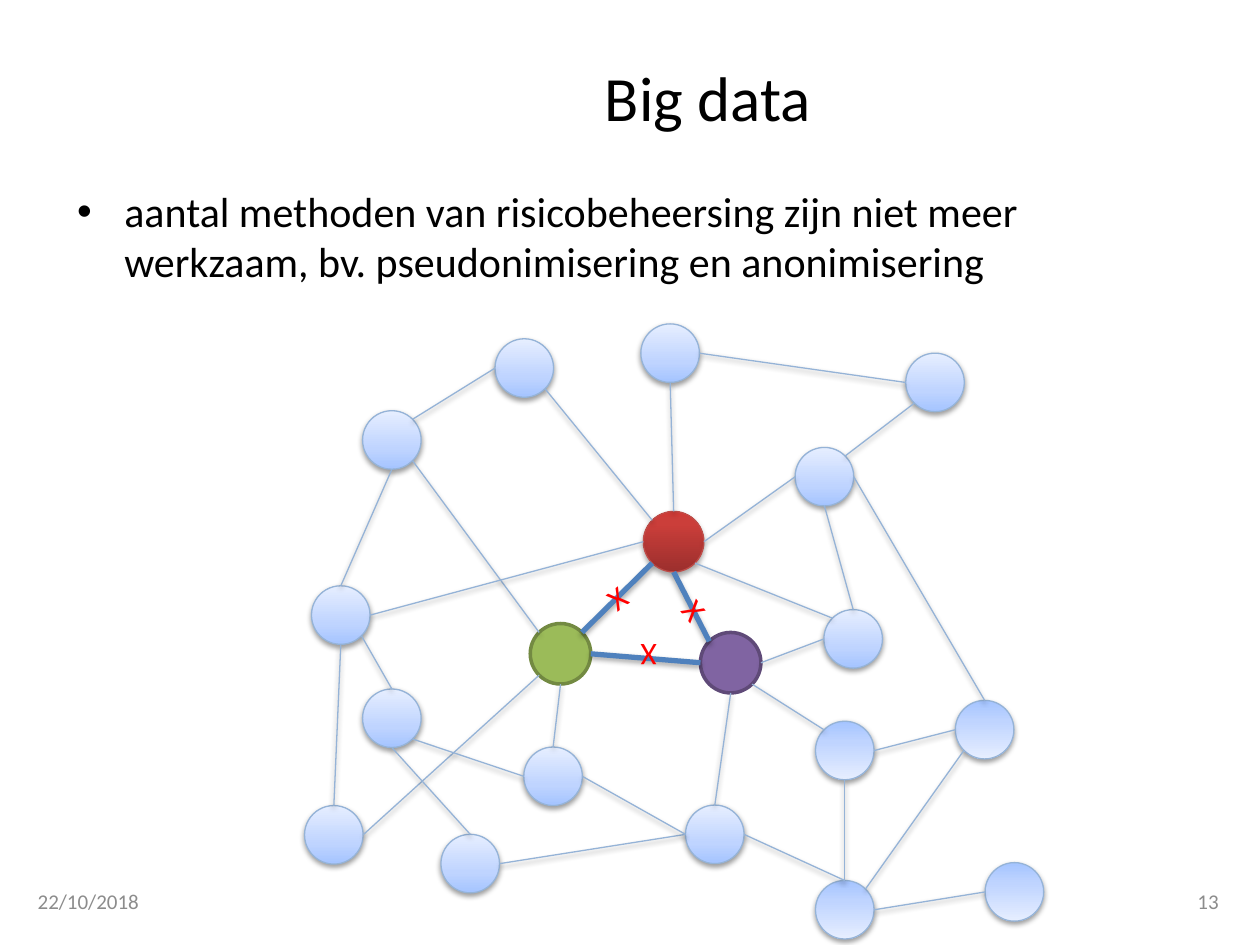
from dataclasses import dataclass
from math import cos, radians, sin

from lxml.etree import SubElement
from pptx import Presentation
from pptx.dml.color import RGBColor
from pptx.enum.shapes import MSO_CONNECTOR as Connector, MSO_SHAPE as Shape
from pptx.enum.text import MSO_ANCHOR as Anchor, MSO_AUTO_SIZE as AutoSize, PP_ALIGN as Align
from pptx.oxml.ns import qn
from pptx.util import Cm, Pt


@dataclass(frozen=True)
class Theme:
    font: str = "Calibri"
    title_size: float = 36
    body_size: float = 24
    mark_size: float = 18
    footer_size: float = 12
    text: str = "000000"
    footer: str = "8C8C8C"
    mark: str = "FF0000"
    node_line: str = "95B3D7"
    strong_line: str = "4F81BD"
    red_line: str = "BF4C48"
    green: str = "9BBB59"
    green_line: str = "738A42"
    purple: str = "8064A2"
    purple_line: str = "5F4A78"
    node_stops: tuple = ((0, "A4C4FF"), (35, "BFD4FF"), (100, "E6EEFF"))
    red_stops: tuple = ((0, "9C2F2D"), (80, "CB3E3A"), (100, "CE3B37"))


THEME = Theme()
NODE_SIZE, CORE_SIZE = 1.18, 1.22

# Centres in cm; the gradient of the lower-right nodes runs the other way
NODES = {
    "A": (7.9, 8.87), "B": (10.57, 7.42), "C": (6.87, 12.4), "D": (18.85, 7.71),
    "E": (16.62, 9.61), "F": (13.51, 7.12), "G": (6.73, 16.83), "H": (11.15, 15.65),
    "I": (7.9, 14.48), "J": (17.2, 12.88), "K": (14.41, 16.82), "L": (9.48, 17.41),
}
LOWER_RIGHT_NODES = {
    "M": (17.03, 15.13), "N": (19.85, 14.71), "O": (17.03, 18.34), "P": (20.45, 17.98),
}

# Connection points of a circle, counter-clockwise from the top in 45 degree steps
SITES = ("T", "TL", "L", "BL", "B", "BR", "R", "TR")

LINKS = (
    "A TR B L", "C BR I T", "G T C B", "G R green BL", "I BR H L", "L T I B",
    "K L L R", "K L H R", "K T purple B", "green B H T", "J L purple R",
    "J TL red BR", "J T E B", "D BL E TR", "D L F R", "E L red R", "red T F B",
    "red TL B BR", "green TL A BR", "A B C T", "red L C R", "P L O R", "M B O T",
    "N L M R", "M TL purple BR", "O T K R", "N T E R", "N BL O TR",
)
BROKEN_LINKS = ("red BL green TR", "green R purple L", "red B purple TL")

# Left, top and rotation of the crosses on the broken links
CROSSES = ((12.01, 11.53, 323.1), (13.59, 11.79, 50.8), (12.65, 12.73, 180))


def rgb(value):
    return RGBColor.from_string(value)


def add_shadow(effects, alpha, distance):
    shadow = SubElement(effects, qn("a:outerShdw"), blurRad=str(Pt(3.1)),
                        dist=str(Pt(distance)), dir="5400000", rotWithShape="0")
    black = SubElement(shadow, qn("a:srgbClr"), val="000000")
    SubElement(black, qn("a:alpha"), val=str(alpha * 1000))


def fill_gradient(circle, stops, angle):
    properties = circle._element.spPr
    gradient = SubElement(properties, qn("a:gradFill"), rotWithShape="1")
    stop_list = SubElement(gradient, qn("a:gsLst"))
    for position, color in stops:
        stop = SubElement(stop_list, qn("a:gs"), pos=str(position * 1000))
        SubElement(stop, qn("a:srgbClr"), val=color)
    SubElement(gradient, qn("a:lin"), ang=str(angle * 60000), scaled="0")
    properties.find(qn("a:prstGeom")).addnext(gradient)


def add_node(slide, center, size, line, width=0.75, fill=None, stops=None,
             angle=270, shadow=None):
    x, y = center
    node = slide.shapes.add_shape(Shape.OVAL, Cm(x - size / 2), Cm(y - size / 2),
                                  Cm(size), Cm(size))
    node.shadow.inherit = False
    node.line.color.rgb = rgb(line)
    node.line.width = Pt(width)
    if stops:
        fill_gradient(node, stops, angle)
    else:
        node.fill.solid()
        node.fill.fore_color.rgb = rgb(fill)
    if shadow:
        add_shadow(node._element.spPr.find(qn("a:effectLst")), *shadow)
    return node


def site_point(node, site):
    turn = radians(45 * SITES.index(site))
    radius = node.width / 2
    return (round(node.left + radius - radius * sin(turn)),
            round(node.top + radius - radius * cos(turn)))


def add_link(slide, nodes, link, color, width, shadow):
    start, start_site, end, end_site = link.split()
    ends = (("a:stCxn", nodes[start], start_site), ("a:endCxn", nodes[end], end_site))
    points = [site_point(node, site) for _, node, site in ends]
    line = slide.shapes.add_connector(Connector.STRAIGHT, *points[0], *points[1])
    line.line.color.rgb = rgb(color)
    line.line.width = Pt(width)
    # Glue both ends to the circles' own connection points
    joints = line._element.find(".//" + qn("p:cNvCxnSpPr"))
    for tag, node, site in ends:
        SubElement(joints, qn(tag), id=str(node.shape_id), idx=str(SITES.index(site)))
    add_shadow(SubElement(line._element.spPr, qn("a:effectLst")), *shadow)


def write(frame, text, *, size, color=THEME.text, align=None, anchor=None, wrap=True):
    frame.word_wrap = wrap
    frame.auto_size = AutoSize.NONE if wrap else AutoSize.SHAPE_TO_FIT_TEXT
    if anchor is not None:
        frame.vertical_anchor = anchor
    paragraph = frame.paragraphs[0]
    if align is not None:
        paragraph.alignment = align
    run = paragraph.add_run()
    run.text = text
    run.font.name = THEME.font
    run.font.size = Pt(size)
    run.font.color.rgb = rgb(color)


def place(holder, left, top, width, height):
    holder.left, holder.top = Cm(left), Cm(top)
    holder.width, holder.height = Cm(width), Cm(height)
    return holder.text_frame


def add_label(slide, text, left, top, width, height, rotation=0, **text_format):
    label = slide.shapes.add_textbox(Cm(left), Cm(top), Cm(width), Cm(height))
    label.rotation = rotation
    write(label.text_frame, text, **text_format)


def add_network(slide):
    soft, firm = (38, 1.6), (35, 1.8)
    nodes = {}
    # Surrounding nodes
    for group, angle in ((NODES, 270), (LOWER_RIGHT_NODES, 90)):
        for name, center in group.items():
            nodes[name] = add_node(slide, center, NODE_SIZE, THEME.node_line,
                                   stops=THEME.node_stops, angle=angle, shadow=soft)
    # Three central nodes
    nodes["red"] = add_node(slide, (13.58, 10.92), CORE_SIZE, THEME.red_line,
                            stops=THEME.red_stops, shadow=firm)
    nodes["green"] = add_node(slide, (11.3, 13.18), CORE_SIZE, THEME.green_line,
                              width=2, fill=THEME.green)
    nodes["purple"] = add_node(slide, (14.73, 13.36), CORE_SIZE, THEME.purple_line,
                               width=2, fill=THEME.purple)
    # Links, then the broken ones with their crosses
    for link in LINKS:
        add_link(slide, nodes, link, THEME.node_line, 0.75, soft)
    for link in BROKEN_LINKS:
        add_link(slide, nodes, link, THEME.strong_line, 3, firm)
    for left, top, rotation in CROSSES:
        add_label(slide, "X", left, top, 0.84, 1.02, rotation,
                  size=THEME.mark_size, color=THEME.mark, wrap=False)


def main():
    deck = Presentation()
    deck.slide_width, deck.slide_height = Cm(25.4), Cm(19.05)
    slide = deck.slides.add_slide(deck.slide_layouts[1])

    # Title and list
    title, body = slide.placeholders
    write(place(title, 4.06, 0.76, 20.42, 2.36), "Big data",
          size=THEME.title_size, align=Align.CENTER, anchor=Anchor.MIDDLE)
    write(place(body, 1.3, 3.61, 22.86, 13.92),
          "aantal methoden van risicobeheersing zijn niet meer werkzaam, "
          "bv. pseudonimisering en anonimisering", size=THEME.body_size)

    add_network(slide)

    # Date and slide number
    for text, left, align in (("22/10/2018", 0.51, Align.LEFT), ("13", 18.9, Align.RIGHT)):
        add_label(slide, text, left, 17.65, 5.92, 1.02, size=THEME.footer_size,
                  color=THEME.footer, align=align, anchor=Anchor.MIDDLE)

    deck.save("out.pptx")


if __name__ == "__main__":
    main()
